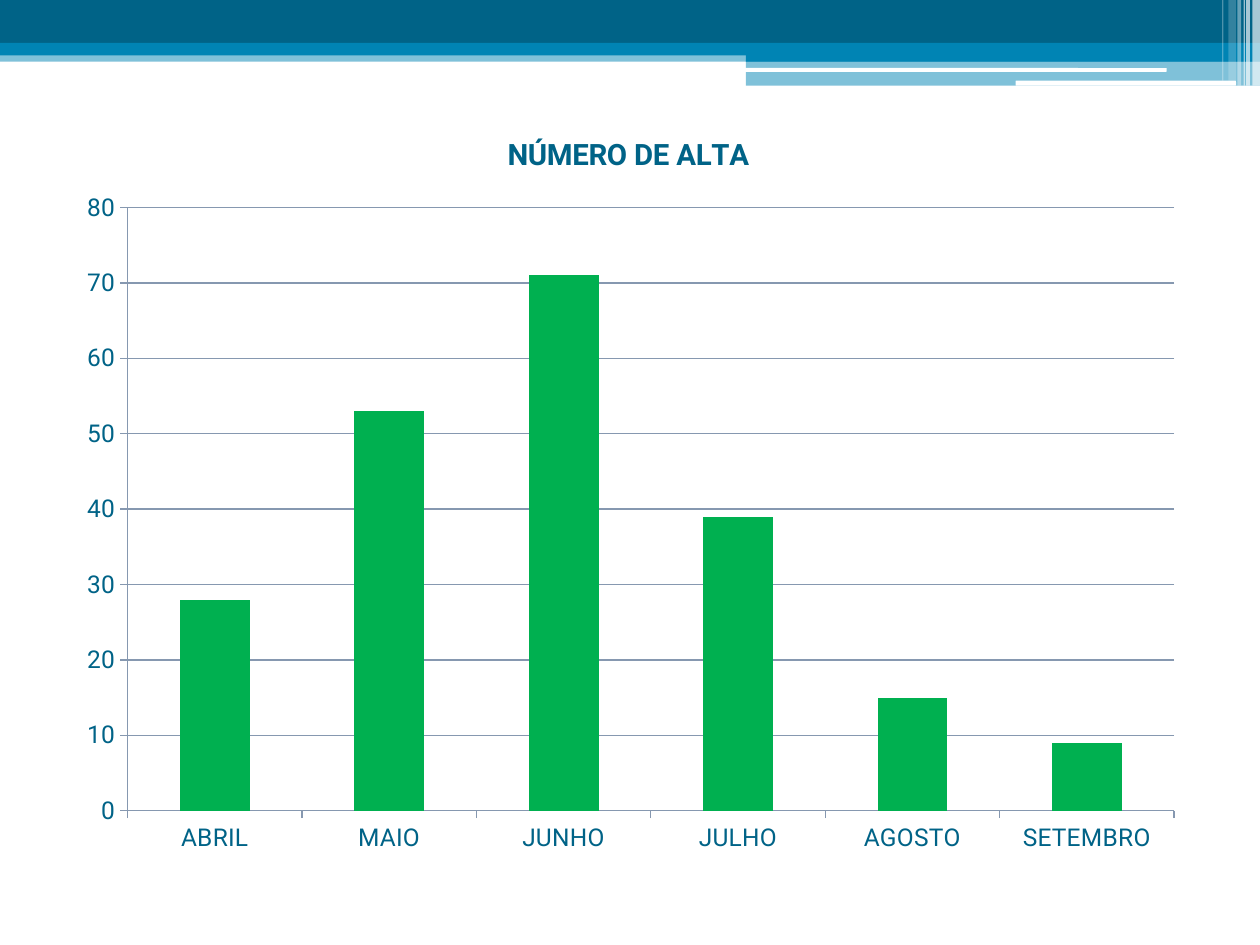
from lxml import etree
from pptx import Presentation
from pptx.chart.data import CategoryChartData
from pptx.dml.color import RGBColor
from pptx.enum.chart import XL_CHART_TYPE, XL_TICK_MARK
from pptx.enum.shapes import MSO_SHAPE
from pptx.oxml import parse_xml
from pptx.oxml.ns import nsdecls, qn
from pptx.util import Inches, Pt

RECTANGLE = MSO_SHAPE.RECTANGLE
ROUNDED = MSO_SHAPE.ROUNDED_RECTANGLE
COLUMNS = XL_CHART_TYPE.COLUMN_CLUSTERED
TICK_OUTSIDE = XL_TICK_MARK.OUTSIDE

NAVY = RGBColor(0x00, 0x63, 0x87)
BLUE = RGBColor(0x00, 0x84, 0xB4)
WHITE = RGBColor(0xFF, 0xFF, 0xFF)
GREEN = RGBColor(0x00, 0xB0, 0x50)
GRID = RGBColor(0x86, 0x98, 0xB0)

BANDS = [
    (0, 0.4, 10, 0.09, BLUE, 50),
    (0, 0, 10, 0.34, NAVY, 100),
    (0, 0.34, 10, 0.1, BLUE, 100),
    (5.92, 0.39, 4.08, 0.1, BLUE, 100),
    (5.92, 0.48, 4.08, 0.2, BLUE, 50),
]
HIGHLIGHTS = [(5.91, 0.54, 3.35, 0.03), (8.06, 0.64, 1.75, 0.04)]
STRIPES = [
    (9.94, 0.06, 0.68, 65),
    (9.89, 0.03, 0.68, 65),
    (9.87, 0.01, 0.68, 60),
    (9.82, 0.03, 0.68, 40),
    (9.75, 0.06, 0.64, 20),
    (9.7, 0.01, 0.64, 30),
]
DISCHARGES = {
    "ABRIL": 28,
    "MAIO": 53,
    "JUNHO": 71,
    "JULHO": 39,
    "AGOSTO": 15,
    "SETEMBRO": 9,
}


class SlideBuilder:
    font_name = "Roboto"
    label_size = Pt(14)
    title_size = Pt(16.8)

    def __init__(self, page):
        self.page = page

    def bar(self, left, top, width, height, color, opacity=100, kind=RECTANGLE):
        shape = self.page.shapes.add_shape(
            kind, Inches(left), Inches(top), Inches(width), Inches(height)
        )
        shape.shadow.inherit = False
        shape.line.fill.background()
        shape.fill.solid()
        shape.fill.fore_color.rgb = color
        if opacity < 100:
            tint = shape.element.spPr.find(qn("a:solidFill"))[0]
            etree.SubElement(tint, qn("a:alpha"), val=str(opacity * 1000))

    def style_font(self, font, size, bold=False):
        font.name = self.font_name
        font.size = size
        font.bold = bold
        font.color.rgb = NAVY

    def style_line(self, line):
        line.color.rgb = GRID
        line.width = Pt(0.75)

    def place_plot(self, chart, left, top, width, height):
        places = "".join(
            f'<c:{name} val="{value}"/>'
            for name, value in zip("xywh", (left, top, width, height))
        )
        plot_area = chart.element.find(qn("c:chart")).find(qn("c:plotArea"))
        for layout in plot_area.findall(qn("c:layout")):
            plot_area.remove(layout)
        plot_area.insert(0, parse_xml(
            f'<c:layout {nsdecls("c")}><c:manualLayout>'
            '<c:layoutTarget val="inner"/>'
            '<c:xMode val="edge"/><c:yMode val="edge"/>'
            f'{places}</c:manualLayout></c:layout>'
        ))

    def column_chart(self, left, top, width, height, title, values):
        data = CategoryChartData()
        data.categories = list(values)
        data.add_series(title, list(values.values()))
        chart = self.page.shapes.add_chart(
            COLUMNS, Inches(left), Inches(top), Inches(width), Inches(height), data
        ).chart
        self.style_font(chart.font, self.label_size)
        chart.has_legend = False
        chart.has_title = True
        chart.chart_title.include_in_layout = False
        heading = chart.chart_title.text_frame
        heading.text = title
        self.style_font(heading.paragraphs[0].font, self.title_size, True)

        plot = chart.plots[0]
        plot.gap_width = 150
        plot.vary_by_categories = False
        fill = plot.series[0].format.fill
        fill.solid()
        fill.fore_color.rgb = GREEN

        for axis in (chart.category_axis, chart.value_axis):
            axis.major_tick_mark = TICK_OUTSIDE
            self.style_line(axis.format.line)
        scale = chart.value_axis
        scale.minimum_scale = 0
        scale.maximum_scale = 80
        scale.major_unit = 10
        scale.has_major_gridlines = True
        self.style_line(scale.major_gridlines.format.line)
        self.place_plot(chart, 0.06, 0.13, 0.92, 0.79)


def main():
    deck = Presentation()
    deck.slide_width = Inches(10)
    deck.slide_height = Inches(7.5)
    builder = SlideBuilder(deck.slides.add_slide(deck.slide_layouts[6]))
    for band in BANDS:
        builder.bar(*band)
    for highlight in HIGHLIGHTS:
        builder.bar(*highlight, WHITE, kind=ROUNDED)
    for left, width, height, opacity in STRIPES:
        builder.bar(left, 0, width, height, WHITE, opacity)
    builder.column_chart(0.47, 0.86, 9.03, 6.06, "NÚMERO DE ALTA", DISCHARGES)
    deck.save("out.pptx")


if __name__ == "__main__":
    main()
